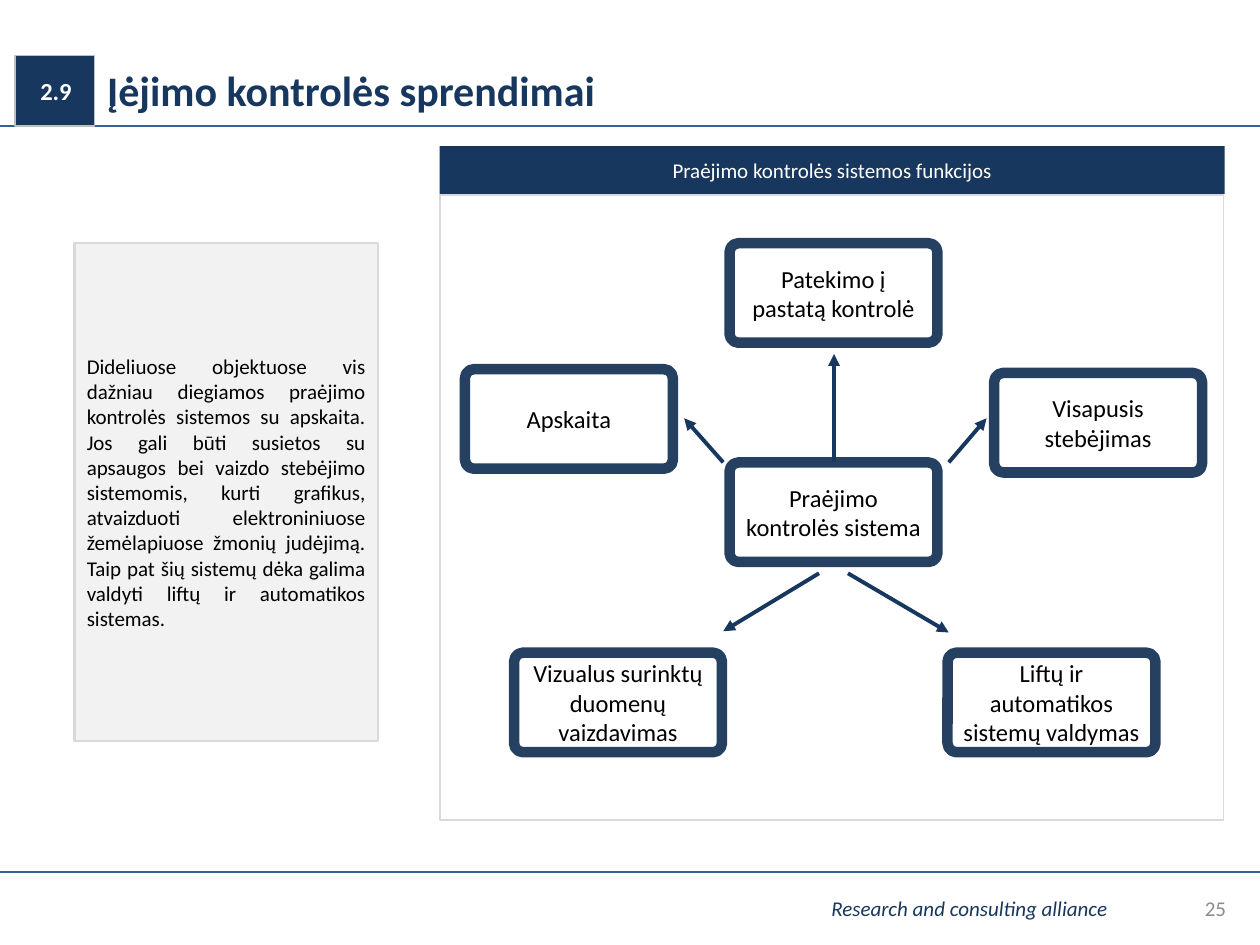
"""Build the slide on access control solutions."""
from dataclasses import dataclass

import pptx
import pptx.dml.color
import pptx.enum.shapes
import pptx.enum.text
import pptx.oxml
import pptx.oxml.ns
import pptx.util

PX = 9144
NAVY, STEEL, BLUE = "17375E", "254061", "376092"
WHITE, BLACK, PALE, SILVER = "FFFFFF", "000000", "F2F2F2", "D9D9D9"
RECT = pptx.enum.shapes.MSO_SHAPE.RECTANGLE
ROUNDED = pptx.enum.shapes.MSO_SHAPE.ROUNDED_RECTANGLE
ALIGN = pptx.enum.text.PP_ALIGN
NODE_W, NODE_H = 165, 79


@dataclass(frozen=True)
class Node:
    text: str
    x: int
    y: int


@dataclass(frozen=True)
class Arrow:
    x1: int
    y1: int
    x2: int
    y2: int


NODES = [
    Node("Praėjimo kontrolės sistema", 579, 367),
    Node("Liftų ir automatikos sistemų valdymas", 752, 518),
    Node("Apskaita", 369, 293),
    Node("Vizualus surinktų duomenų vaizdavimas", 408, 518),
    Node("Visapusis stebėjimas", 789, 296),
    Node("Patekimo į pastatą kontrolė", 579, 193),
]
ARROWS = [
    Arrow(574, 367, 543, 332),
    Arrow(662, 367, 662, 281),
    Arrow(753, 367, 783, 332),
    Arrow(650, 455, 574, 501),
    Arrow(673, 455, 753, 502),
]
DESCRIPTION = (
    "Dideliuose objektuose vis dažniau diegiamos praėjimo kontrolės sistemos "
    "su apskaita. Jos gali būti susietos su apsaugos bei vaizdo stebėjimo "
    "sistemomis, kurti grafikus, atvaizduoti elektroniniuose žemėlapiuose "
    "žmonių judėjimą. Taip pat šių sistemų dėka galima valdyti liftų ir "
    "automatikos sistemas."
)


def px(n: int) -> int:
    return pptx.util.Emu(n * PX)


def rgb(color: str) -> pptx.dml.color.RGBColor:
    return pptx.dml.color.RGBColor.from_string(color)


def write(sp, text: str, *, size: int = 12, color: str = BLACK, bold: bool = False,
          italic: bool = False, align=ALIGN.LEFT, left: int = 10) -> None:
    tf = sp.text_frame
    tf.word_wrap = True
    tf.auto_size = pptx.enum.text.MSO_AUTO_SIZE.NONE
    tf.vertical_anchor = pptx.enum.text.MSO_ANCHOR.MIDDLE
    tf.margin_left, tf.margin_right = px(left), px(10)
    tf.margin_top = tf.margin_bottom = px(5)
    p = tf.paragraphs[0]
    p.alignment = align
    r = p.add_run()
    r.text = text
    r.font.name = "Calibri"
    r.font.size = pptx.util.Pt(size)
    r.font.bold, r.font.italic = bold, italic
    r.font.color.rgb = rgb(color)


def add_box(s, x: int, y: int, w: int, h: int, *, fill: str, line: str = "",
            width: float = 1, kind=RECT):
    sp = s.shapes.add_shape(kind, px(x), px(y), px(w), px(h))
    sp.shadow.inherit = False
    sp.fill.solid()
    sp.fill.fore_color.rgb = rgb(fill)
    if line:
        sp.line.color.rgb = rgb(line)
        sp.line.width = pptx.util.Pt(width)
    else:
        sp.line.fill.background()
    return sp


def add_label(s, x: int, y: int, w: int, h: int, text: str, **fmt) -> None:
    write(s.shapes.add_textbox(px(x), px(y), px(w), px(h)), text, **fmt)


def add_line(s, x1: int, y1: int, x2: int, y2: int, *, color: str, width: float,
             arrow: bool = False) -> None:
    sp = s.shapes.add_connector(pptx.enum.shapes.MSO_CONNECTOR.STRAIGHT,
                                px(x1), px(y1), px(x2), px(y2))
    sp.line.color.rgb = rgb(color)
    sp.line.width = pptx.util.Pt(width)
    if arrow:
        end = pptx.oxml.parse_xml(
            f'<a:tailEnd {pptx.oxml.ns.nsdecls("a")} type="triangle"/>')
        sp.line._get_or_add_ln().append(end)
    sp._element.spPr.append(
        pptx.oxml.parse_xml(f'<a:effectLst {pptx.oxml.ns.nsdecls("a")}/>'))


def add_node(s, node: Node) -> None:
    sp = add_box(s, node.x, node.y, NODE_W, NODE_H, fill=WHITE, line=STEEL,
                 width=6, kind=ROUNDED)
    sp.adjustments[0] = 0.09
    write(sp, node.text, size=14, align=ALIGN.CENTER)


def main() -> None:
    prs = pptx.Presentation()
    prs.slide_width, prs.slide_height = px(1000), px(750)
    s = prs.slides.add_slide(prs.slide_layouts.get_by_name("Title Only"))

    for y in (100, 692):
        add_line(s, 0, y, 1000, y, color=BLUE, width=1)
    add_label(s, 650, 706, 346, 29, "Research and consulting alliance",
              color=NAVY, italic=True)
    add_label(s, 750, 701, 233, 40, "25", color="8C8C8C", align=ALIGN.RIGHT)

    title = s.shapes.title
    title.left, title.top, title.width, title.height = px(75), px(45), px(864), px(53)
    write(title, "Įėjimo kontrolės sprendimai", size=24, color=NAVY, bold=True)

    description = add_box(s, 59, 193, 241, 395, fill=PALE, line=SILVER, width=1.5)
    write(description, DESCRIPTION, align=ALIGN.JUSTIFY)
    header = add_box(s, 349, 116, 623, 38, fill=NAVY)
    write(header, "Praėjimo kontrolės sistemos funkcijos", color=WHITE,
          align=ALIGN.CENTER)
    add_box(s, 349, 155, 622, 496, fill=WHITE, line=SILVER)
    number = add_box(s, 12, 44, 63, 56, fill=NAVY, line="BFBFBF")
    write(number, "2.9", size=14, color=WHITE, bold=True, left=20)

    for node in NODES:
        add_node(s, node)
    for a in ARROWS:
        add_line(s, a.x1, a.y1, a.x2, a.y2, color=NAVY, width=2.25, arrow=True)

    prs.save("out.pptx")


if __name__ == "__main__":
    main()
